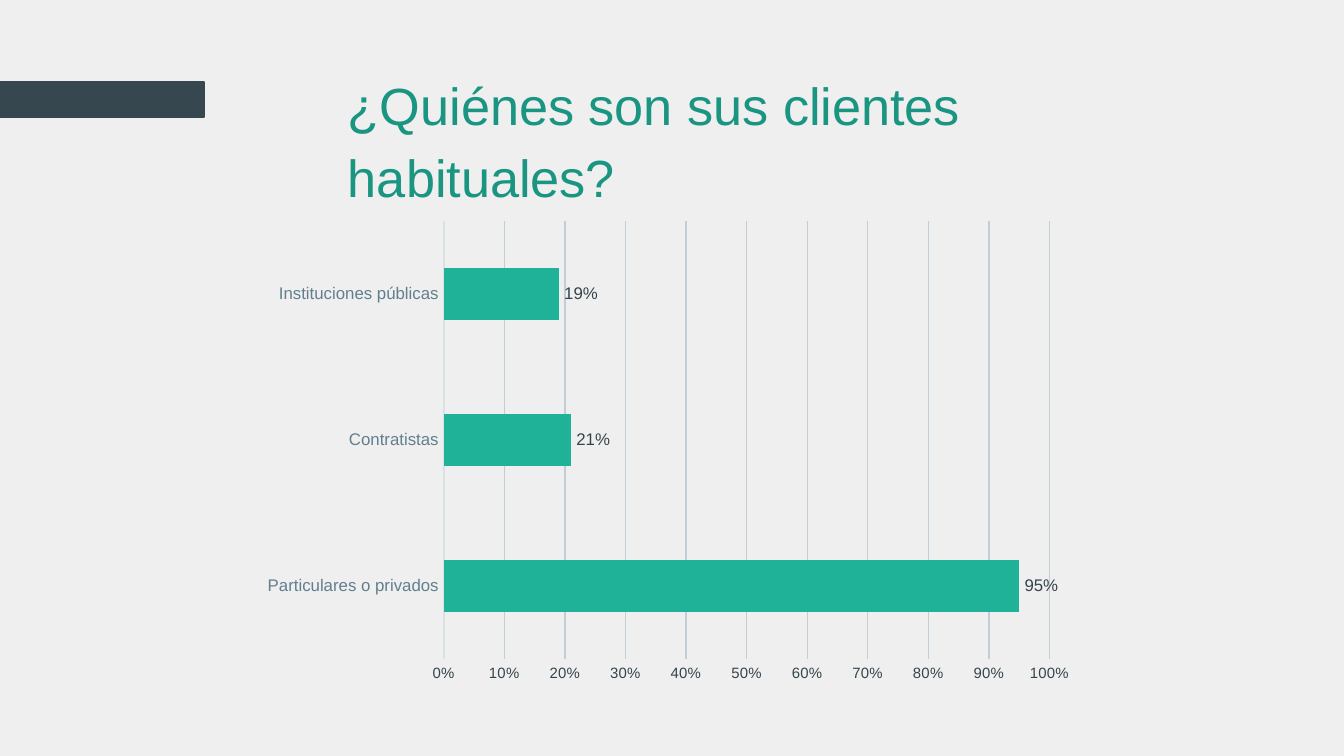
from pptx import Presentation
from pptx.chart.data import CategoryChartData
from pptx.dml.color import RGBColor
from pptx.enum.chart import XL_CHART_TYPE as ChartType, XL_LABEL_POSITION as LabelPos, XL_TICK_MARK as Tick
from pptx.enum.shapes import MSO_SHAPE as Shape
from pptx.enum.text import MSO_ANCHOR as Anchor
from pptx.util import Pt

EMU_PER_PX = 914400 / 134.4
COLORS = {
    "background": "EFEFEF", "band": "37474F", "title": "1A9581",
    "bars": "1FB299", "text": "263238", "categories": "617F8F",
    "values": "34444B", "axis": "DAE2E6", "grid": "C1CED5",
}


def px(*lengths):
    return [round(length * EMU_PER_PX) for length in lengths]


def style_font(font, size, color):
    font.name = "Arial"
    font.size = Pt(size)
    font.color.rgb = RGBColor.from_string(COLORS[color])


prs = Presentation()
prs.slide_width, prs.slide_height = px(1344, 756)
slide = prs.slides.add_slide(prs.slide_layouts[6])
slide.background.fill.solid()
slide.background.fill.fore_color.rgb = RGBColor.from_string(COLORS["background"])

band = slide.shapes.add_shape(Shape.RECTANGLE, *px(0, 82, 204, 35))
band.shadow.inherit = False
band.fill.solid()
band.fill.fore_color.rgb = RGBColor.from_string(COLORS["band"])
band.line.color.rgb = RGBColor.from_string(COLORS["band"])
band.line.width = Pt(0.75)

title = slide.shapes.add_textbox(*px(338, 54, 708, 133)).text_frame
title.word_wrap = True
title.vertical_anchor = Anchor.TOP
title.margin_left, title.margin_top, title.margin_right, title.margin_bottom = px(10, 10, 10, 10)
question = title.paragraphs[0]
question.text = "¿Quiénes son sus clientes habituales?"
question.line_spacing = 1.15
style_font(question.font, 28, "title")

clients = CategoryChartData(number_format="0%")
clients.categories = ["Particulares o privados", "Contratistas", "Instituciones públicas"]
clients.add_series("Series 1", [0.95, 0.21, 0.19])
chart = slide.shapes.add_chart(ChartType.BAR_CLUSTERED, *px(251, 211, 835, 480), clients).chart
chart.has_legend = False
chart.has_title = False
style_font(chart.font, 10, "text")

category_axis = chart.category_axis
category_axis.major_tick_mark = category_axis.minor_tick_mark = Tick.NONE
category_axis.format.line.color.rgb = RGBColor.from_string(COLORS["axis"])
category_axis.format.line.width = Pt(0.75)
style_font(category_axis.tick_labels.font, 9, "categories")

value_axis = chart.value_axis
value_axis.minimum_scale = 0
value_axis.maximum_scale = 1
value_axis.major_unit = 0.1
value_axis.major_tick_mark = value_axis.minor_tick_mark = Tick.NONE
value_axis.format.line.fill.background()
value_axis.major_gridlines.format.line.color.rgb = RGBColor.from_string(COLORS["grid"])
value_axis.major_gridlines.format.line.width = Pt(0.75)
value_axis.tick_labels.number_format = "0%"
value_axis.tick_labels.number_format_is_linked = False
style_font(value_axis.tick_labels.font, 8, "values")

plot = chart.plots[0]
plot.gap_width = 182
plot.vary_by_categories = False
bars = plot.series[0]
bars.format.fill.solid()
bars.format.fill.fore_color.rgb = RGBColor.from_string(COLORS["bars"])
labels = bars.data_labels
labels.show_value = True
labels.number_format = "0%"
labels.number_format_is_linked = False
labels.position = LabelPos.OUTSIDE_END
style_font(labels.font, 9, "values")

prs.save("out.pptx")
